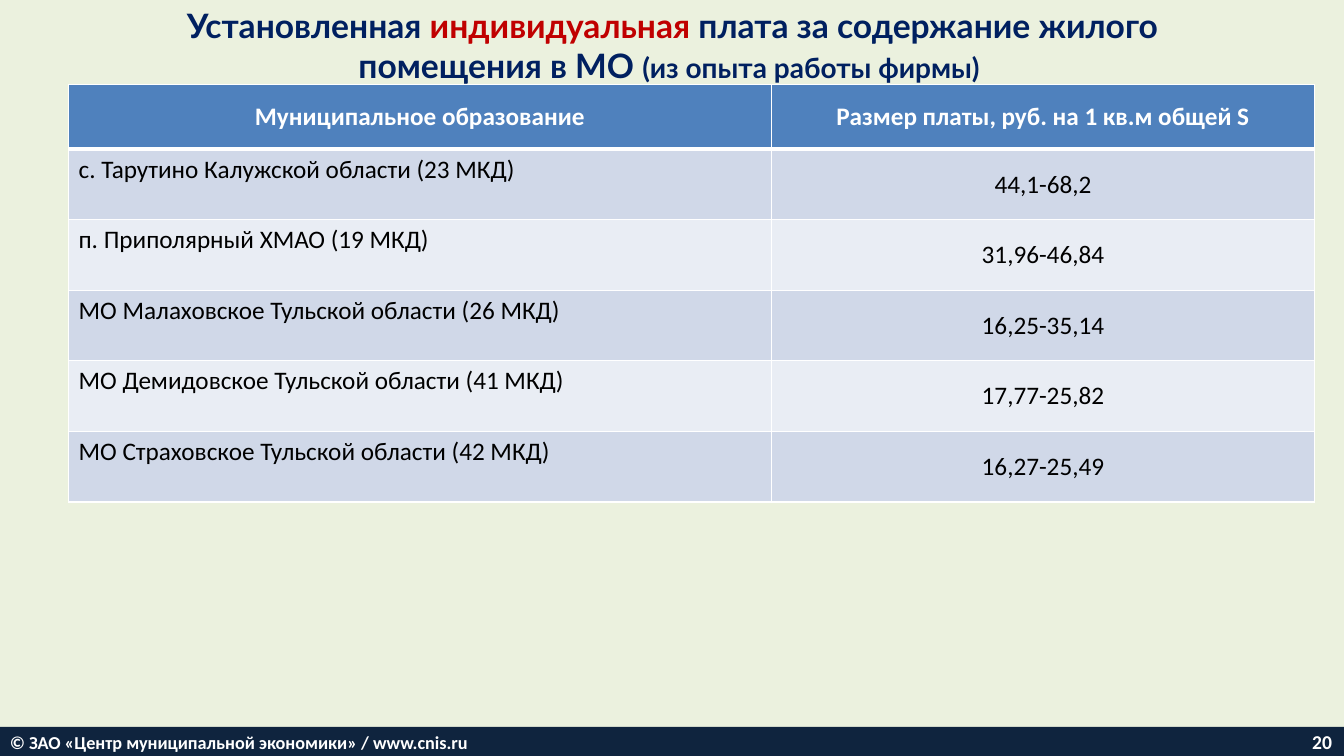
from dataclasses import dataclass
from lxml.etree import SubElement
from pptx import Presentation
from pptx.dml.color import RGBColor
from pptx.enum.shapes import MSO_SHAPE as Shape
from pptx.enum.text import MSO_ANCHOR as Anchor, PP_ALIGN as Align
from pptx.oxml.ns import qn
from pptx.util import Inches, Pt


@dataclass(frozen=True)
class Theme:
    back: str = "EBF1DE"
    navy: str = "002060"
    red: str = "C00000"
    head: str = "4F81BD"
    bands: tuple = ("D0D8E8", "E9EDF4")
    bar: str = "0F243E"
    white: str = "FFFFFF"
    black: str = "000000"
    title: int = 24
    note: int = 20
    cell: int = 18
    foot: int = 13
    page: int = 14
    face: str = "Calibri"
    title_face: str = "Lato"


@dataclass(frozen=True)
class Part:
    text: str
    color: str
    size: int


@dataclass(frozen=True)
class Rate:
    place: str
    price: str


THEME = Theme()
TITLE = (
    Part("Установленная ", THEME.navy, THEME.title),
    Part("индивидуальная", THEME.red, THEME.title),
    Part(" плата за содержание жилого помещения в МО ", THEME.navy, THEME.title),
    Part("(из опыта работы фирмы) ", THEME.navy, THEME.note),
)
HEAD = Rate("Муниципальное образование", "Размер платы, руб. на 1 кв.м общей S")
RATES = (
    Rate("с. Тарутино Калужской области (23 МКД)", "44,1-68,2"),
    Rate("п. Приполярный ХМАО (19 МКД)", "31,96-46,84"),
    Rate("МО Малаховское Тульской области (26 МКД)", "16,25-35,14"),
    Rate("МО Демидовское Тульской области (41 МКД)", "17,77-25,82"),
    Rate("МО Страховское Тульской области (42 МКД)", "16,27-25,49"),
)
COLS = (6.97, 5.39)
HEAD_H, ROW_H = 0.64, 0.7


def rgb(code: str) -> RGBColor:
    return RGBColor.from_string(code)


def box(left: float, top: float, width: float, height: float) -> tuple:
    return tuple(Inches(n) for n in (left, top, width, height))


def write(frame, text: str, size: int, color: str, bold: bool, align) -> None:
    para = frame.paragraphs[0]
    para.text = text
    para.alignment = align
    font = para.font
    font.name, font.size, font.bold = THEME.face, Pt(size), bold
    font.color.rgb = rgb(color)


def edge(cell, top: int, foot: int) -> None:
    """Draw white borders, with the top and bottom widths in points."""
    props = cell._tc.get_or_add_tcPr()
    for side, width in (("L", 1), ("R", 1), ("T", top), ("B", foot)):
        line = SubElement(props, qn(f"a:ln{side}"), w=str(Pt(width)))
        fill = SubElement(line, qn("a:solidFill"))
        SubElement(fill, qn("a:srgbClr"), val=THEME.white)


def add_title(slide) -> None:
    frame = slide.shapes.add_textbox(*box(1.67, 0, 10, 0.91)).text_frame
    frame.word_wrap = True
    para = frame.paragraphs[0]
    para.alignment = Align.CENTER
    para.font.name, para.font.bold = THEME.title_face, True
    for part in TITLE:
        run = para.add_run()
        run.text = part.text
        run.font.size = Pt(part.size)
        run.font.color.rgb = rgb(part.color)


def add_rates(slide) -> None:
    rows = (HEAD, *RATES)
    high = HEAD_H + ROW_H * len(RATES)
    area = box(0.68, 0.84, sum(COLS), high)
    table = slide.shapes.add_table(len(rows), len(COLS), *area).table
    for col, width in zip(table.columns, COLS):
        col.width = Inches(width)
    for i, rate in enumerate(rows):
        head = i == 0
        table.rows[i].height = Inches(HEAD_H if head else ROW_H)
        fill = THEME.head if head else THEME.bands[(i - 1) % 2]
        color = THEME.white if head else THEME.black
        for j, text in enumerate((rate.place, rate.price)):
            cell = table.cell(i, j)
            mid = head or j == 1
            edge(cell, 3 if i == 1 else 1, 3 if head else 1)
            cell.fill.solid()
            cell.fill.fore_color.rgb = rgb(fill)
            cell.vertical_anchor = Anchor.MIDDLE if mid else Anchor.TOP
            align = Align.CENTER if mid else Align.LEFT
            write(cell.text_frame, text, THEME.cell, color, head, align)


def add_foot(slide) -> None:
    bar = slide.shapes.add_shape(Shape.RECTANGLE, *box(0, 7.21, 13.33, 0.32))
    bar.shadow.inherit = False
    bar.fill.solid()
    bar.fill.fore_color.rgb = rgb(THEME.bar)
    bar.line.fill.background()
    page = slide.shapes.add_textbox(*box(10.98, 7.21, 2.33, 0.3))
    credit = "© ЗАО «Центр муниципальной экономики» / www.cnis.ru"
    for shape, text, size, align, anchor in (
        (bar, credit, THEME.foot, Align.LEFT, Anchor.TOP),
        (page, "20", THEME.page, Align.RIGHT, Anchor.MIDDLE),
    ):
        frame = shape.text_frame
        frame.word_wrap = True
        frame.vertical_anchor = anchor
        write(frame, text, size, THEME.white, True, align)


def main() -> None:
    deck = Presentation()
    deck.slide_width, deck.slide_height = Inches(13.33), Inches(7.5)
    slide = deck.slides.add_slide(deck.slide_layouts[6])
    slide.background.fill.solid()
    slide.background.fill.fore_color.rgb = rgb(THEME.back)
    add_title(slide)
    add_rates(slide)
    add_foot(slide)
    deck.save("out.pptx")


if __name__ == "__main__":
    main()
